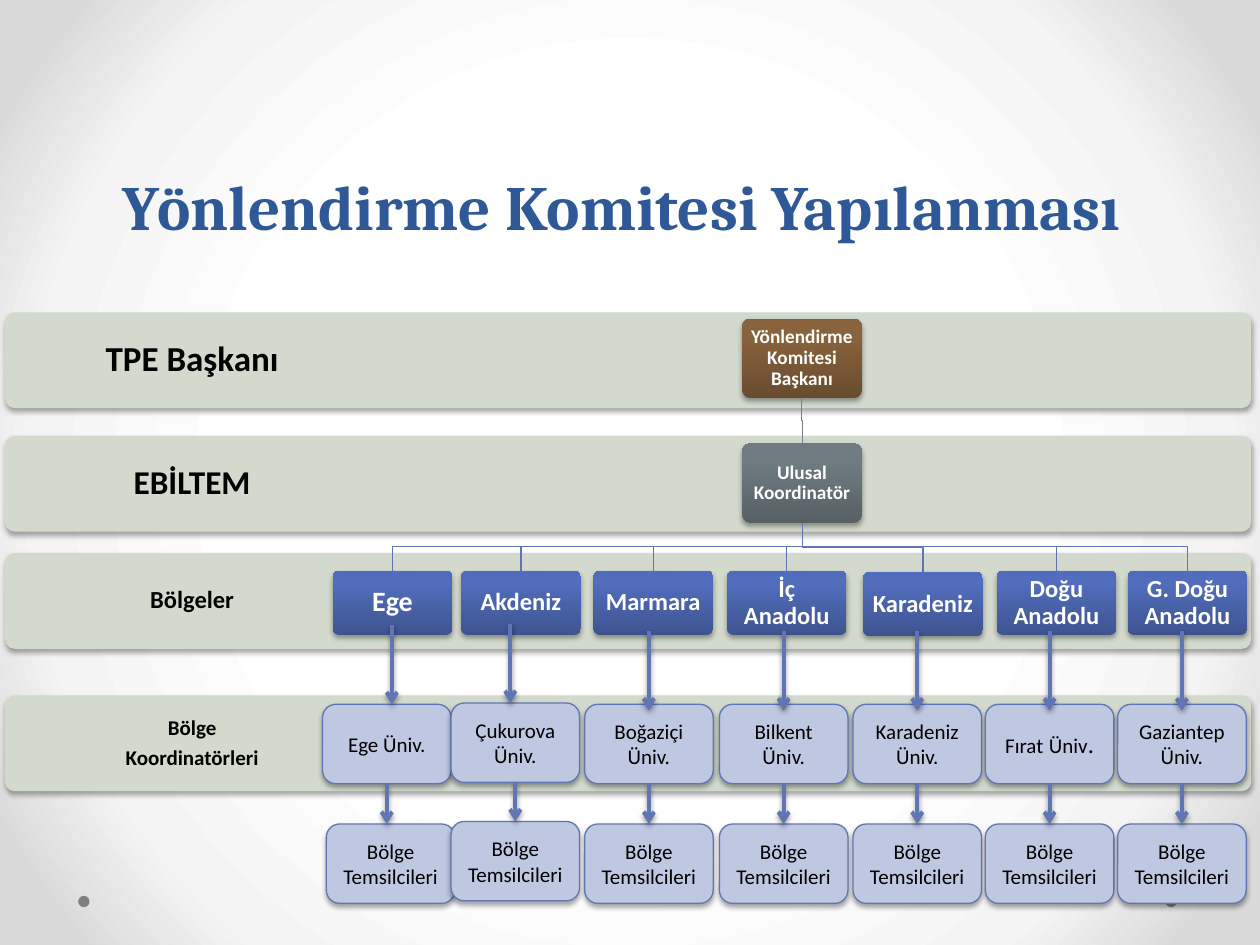
from lxml import etree
from pptx import Presentation
from pptx.dml.color import RGBColor
from pptx.enum import shapes, text
from pptx.oxml import parse_xml
from pptx.oxml.ns import nsdecls, qn
from pptx.util import Inches, Pt

COLORS = {
    "title": "2F5897", "band": "D3DACD", "dot": "808080", "black": "000000",
    "white": "FFFFFF", "blue": "6076B4", "pale": "BFC8E1", "grey": "758085",
}
BACKGROUND = [(50, "FFFFFF"), (76, "F4F4F4"), (92, "DADADA")]
BROWN = [(0, "694C2F"), (80, "89633D"), (100, "8B633C")]
SLATE = [(0, "566065"), (80, "6F7D83"), (100, "6F7E84")]
ROYAL = [(0, "3E5490"), (80, "516DBB"), (100, "4F6CBE")]

TITLE = "Yönlendirme Komitesi Yapılanması"
# lines, top, font size, inset
BANDS = [
    (["Bölge", "Koordinatörleri"], 5.52, 12, 0.09),
    (["Bölgeler"], 4.39, 14, 0.11),
    (["EBİLTEM"], 3.46, 19, 0.15),
    (["TPE Başkanı"], 2.48, 20, 0.16),
]
# name, left, top, font size
REGIONS = [
    ("Ege", 2.64, 4.53, 16),
    ("Akdeniz", 3.66, 4.53, 14),
    ("Marmara", 4.71, 4.53, 14),
    ("İç Anadolu", 5.77, 4.53, 14),
    ("Karadeniz", 6.85, 4.54, 14),
    ("Doğu Anadolu", 7.91, 4.53, 14),
    ("G. Doğu Anadolu", 8.95, 4.53, 14),
]
# university runs, left, top, arrow x, arrow top, representatives' left and top
UNIVERSITIES = [
    ([("Ege Üniv.", 12)], 2.56, 5.59, 3.11, 4.96, 2.59, 6.54),
    ([("Çukurova Üniv.", 12)], 3.58, 5.58, 4.05, 4.95, 3.58, 6.52),
] + [
    (runs, left, 5.59, left + 0.51, 5.01, left, 6.54)
    for runs, left in [
        ([("Boğaziçi Üniv.", 12)], 4.64),
        ([("Bilkent Üniv.", 12)], 5.71),
        ([("Karadeniz Üniv.", 12)], 6.77),
        ([("Fırat", 12), (" ", 14), ("Üniv", 12), (".", 14)], 7.82),
        ([("Gaziantep Üniv.", 12)], 8.87),
    ]
]
REPRESENTATIVES = [("Bölge Temsilcileri", 12)]
BOX_W, HEAD_H, REGION_H = 0.95, 0.63, 0.51
HEAD_INSET, REGION_INSET = 0.04, 0.05
UNIT_W, UNIT_H = 1.02, 0.63
ARROW_LENGTH = 0.63
TRUNK_X = 6.37


def rgb(name):
    return RGBColor.from_string(COLORS[name])


def set_gradient(fill, holder, stops, direction):
    """Swap a fresh gradient's stops and direction for the given ones."""
    fill.gradient()
    gradient = next(holder.iter(qn("a:gradFill")))
    for child in list(gradient):
        gradient.remove(child)
    marks = "".join(f'<a:gs pos="{pos * 1000}"><a:srgbClr val="{color}"/></a:gs>'
                    for pos, color in stops)
    gradient.append(parse_xml(f'<a:gsLst {nsdecls("a")}>{marks}</a:gsLst>'))
    gradient.append(parse_xml(direction))


def add_shadow(effects, alpha, distance):
    effects.append(parse_xml(
        f'<a:outerShdw {nsdecls("a")} blurRad="{Pt(3.1)}" dist="{Pt(distance)}" '
        f'dir="5400000" rotWithShape="0"><a:srgbClr val="000000">'
        f'<a:alpha val="{alpha * 1000}"/></a:srgbClr></a:outerShdw>'))


def write(shape, paragraphs, color, bold=False, insets=(0.1, 0.05), spacing=None):
    frame = shape.text_frame
    frame.word_wrap = True
    frame.vertical_anchor = text.MSO_ANCHOR.MIDDLE
    frame.margin_left = frame.margin_right = Inches(insets[0])
    frame.margin_top = frame.margin_bottom = Inches(insets[1])
    for index, runs in enumerate(paragraphs):
        para = frame.paragraphs[0] if index == 0 else frame.add_paragraph()
        para.alignment = text.PP_ALIGN.CENTER
        if spacing:
            para.line_spacing = spacing
        if index < len(paragraphs) - 1:
            para.space_after = Pt(4.2)
        for words, size in runs:
            span = para.add_run()
            span.text = words
            span.font.size = Pt(size)
            span.font.name = "Calibri"
            span.font.bold = bold
            span.font.color.rgb = rgb(color)


def add_box(page, left, top, width, height, fill, line=None, rounding=None):
    """Add a shadowed rounded box; fill is a colour name or gradient stops."""
    box = page.shapes.add_shape(shapes.MSO_SHAPE.ROUNDED_RECTANGLE, Inches(left),
                                Inches(top), Inches(width), Inches(height))
    if rounding:
        box.adjustments[0] = rounding
    if isinstance(fill, str):
        box.fill.solid()
        box.fill.fore_color.rgb = rgb(fill)
    else:
        set_gradient(box.fill, box._element.spPr, fill,
                     f'<a:lin {nsdecls("a")} ang="16200000" scaled="0"/>')
    if line:
        box.line.color.rgb = rgb(line)
        box.line.width = Pt(0.75)
    else:
        box.line.fill.background()
    box.shadow.inherit = False
    add_shadow(box._element.spPr.find(qn("a:effectLst")), 35, 1.8)
    return box


def add_head(page, name, left, top, height, size, stops, inset):
    box = add_box(page, left, top, BOX_W, height, stops, rounding=0.1)
    write(box, [[(name, size)]], "white", True, (inset, inset), 0.9)


def add_unit(page, runs, left, top):
    box = add_box(page, left, top, UNIT_W, UNIT_H, "pale", "blue")
    write(box, [runs], "black")
    return box


def add_elbow(page, x1, y1, x2, y2, color):
    middle = (y1 + y2) / 2
    points = [(x1, middle), (x2, middle), (x2, y2)]
    builder = page.shapes.build_freeform(Inches(x1), Inches(y1))
    builder.add_line_segments([(Inches(x), Inches(y)) for x, y in points], close=False)
    elbow = builder.convert_to_shape()
    elbow.fill.background()
    elbow.line.color.rgb = rgb(color)
    elbow.line.width = Pt(0.75)
    elbow.shadow.inherit = False


def add_arrow(page, x, top, bottom):
    arrow = page.shapes.add_connector(shapes.MSO_CONNECTOR.STRAIGHT, Inches(x),
                                      Inches(top), Inches(x), Inches(bottom))
    arrow.line.color.rgb = rgb("blue")
    arrow.line.width = Pt(2.25)
    etree.SubElement(arrow.line._get_or_add_ln(), qn("a:tailEnd"), type="arrow")
    add_shadow(etree.SubElement(arrow._element.spPr, qn("a:effectLst")), 38, 1.6)
    return arrow


def main():
    deck = Presentation()
    deck.slide_width, deck.slide_height = Inches(10), Inches(7.5)
    page = deck.slides.add_slide(deck.slide_layouts[5])
    set_gradient(page.background.fill, page._element, BACKGROUND,
                 f'<a:path {nsdecls("a")} path="circle">'
                 '<a:fillToRect l="50000" t="50000" r="50000" b="50000"/></a:path>')

    title = page.shapes.title
    title.left, title.top = Inches(0.43), Inches(1.15)
    title.width, title.height = Inches(9), Inches(0.83)
    title.text_frame.auto_size = text.MSO_AUTO_SIZE.NONE
    title.text_frame.vertical_anchor = text.MSO_ANCHOR.BOTTOM
    para = title.text_frame.paragraphs[0]
    para.alignment = text.PP_ALIGN.CENTER
    para.line_spacing = Pt(58)
    span = para.add_run()
    span.text = TITLE
    span.font.size, span.font.name, span.font.bold = Pt(36), "Cambria", True
    span.font.color.rgb = rgb("title")

    for left in (9.25, 0.62):
        dot = page.shapes.add_shape(shapes.MSO_SHAPE.OVAL, Inches(left), Inches(7.11),
                                    Inches(0.09), Inches(0.09))
        dot.fill.solid()
        dot.fill.fore_color.rgb = rgb("dot")
        dot.line.fill.background()
        dot.shadow.inherit = False

    for lines, top, size, inset in BANDS:
        add_box(page, 0.04, top, 9.89, 0.76, "band", rounding=0.1)
        label = page.shapes.add_textbox(Inches(0.04), Inches(top), Inches(2.97), Inches(0.76))
        write(label, [[(line, size)] for line in lines], "black", True, (inset, inset), 0.9)

    add_head(page, "Yönlendirme Komitesi Başkanı", 5.89, 2.53, HEAD_H, 11, BROWN, HEAD_INSET)
    add_elbow(page, 6.36, 3.16, TRUNK_X, 3.52, "grey")
    add_head(page, "Ulusal Koordinatör", 5.89, 3.52, HEAD_H, 11, SLATE, HEAD_INSET)
    for name, left, top, size in REGIONS:
        add_elbow(page, TRUNK_X, 4.15, left + BOX_W / 2, top, "blue")
        add_head(page, name, left, top, REGION_H, size, ROYAL, REGION_INSET)

    for runs, left, top, arrow_x, arrow_top, rep_left, rep_top in UNIVERSITIES:
        university = add_unit(page, runs, left, top)
        add_arrow(page, arrow_x, arrow_top, arrow_top + ARROW_LENGTH)
        representatives = add_unit(page, REPRESENTATIVES, rep_left, rep_top)
        link = add_arrow(page, left + UNIT_W / 2, top + UNIT_H, rep_top)
        link.begin_connect(university, 2)
        if rep_left == left:
            link.end_connect(representatives, 0)

    deck.save("out.pptx")


if __name__ == "__main__":
    main()
